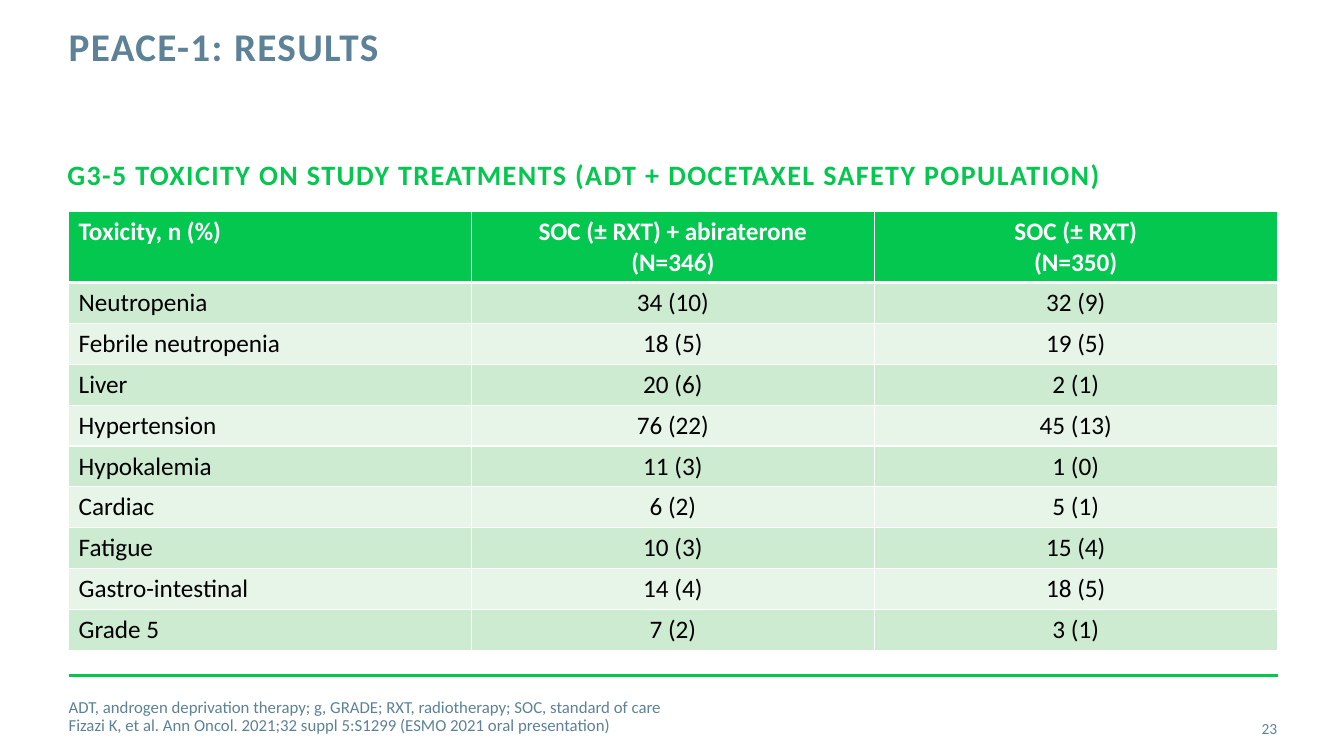
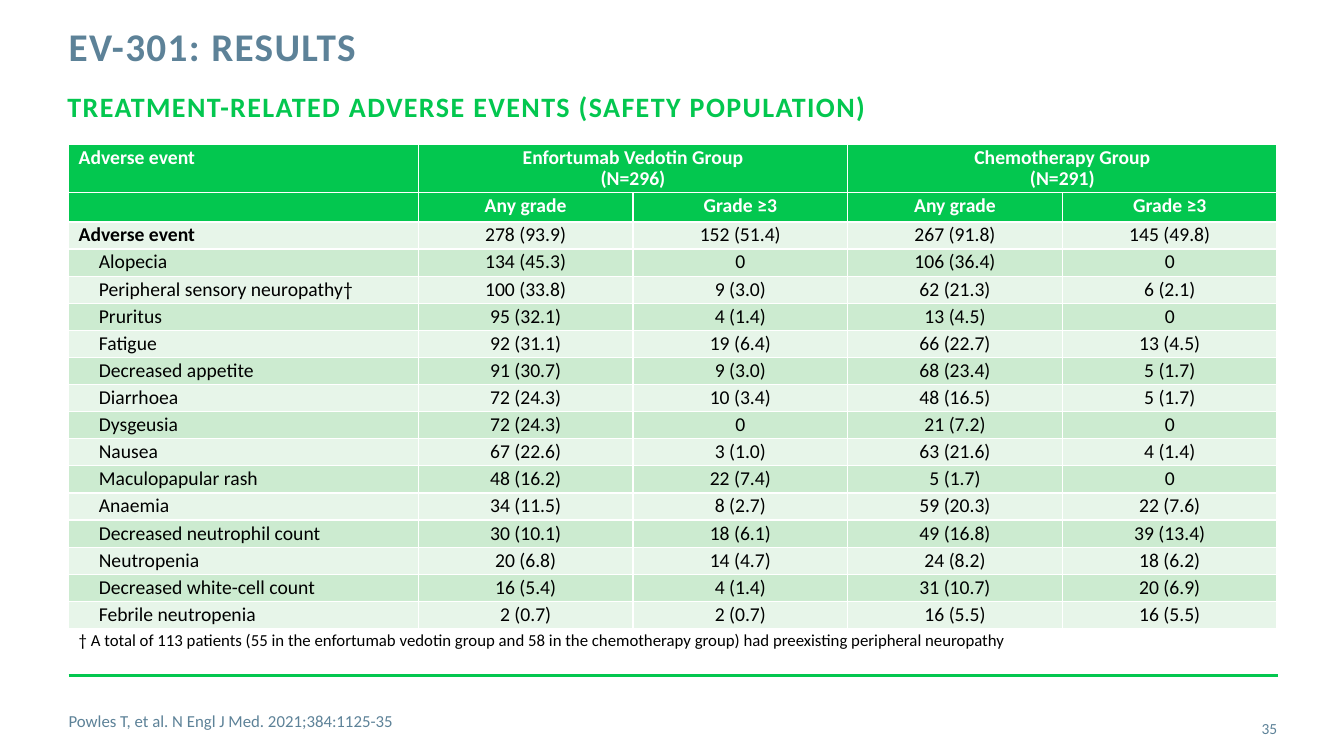
import pptx
import pptx.dml.color
import pptx.enum.shapes
import pptx.enum.text
import pptx.oxml.ns
import pptx.util
from lxml import etree

Pt = pptx.util.Pt
RGBColor = pptx.dml.color.RGBColor
Align = pptx.enum.text.PP_ALIGN
Anchor = pptx.enum.text.MSO_ANCHOR
qn = pptx.oxml.ns.qn

GREEN = RGBColor(0x03, 0xC7, 0x4F)
SLATE = RGBColor(0x5D, 0x82, 0x98)
BAND_DARK = RGBColor(0xCC, 0xEB, 0xD0)
BAND_LIGHT = RGBColor(0xE7, 0xF5, 0xE9)
WHITE = RGBColor(0xFF, 0xFF, 0xFF)
BLACK = RGBColor(0, 0, 0)
FONT = "Calibri"
LEFT = 49
TABLE_WIDTH = 863.3

SLIDES = [
    {
        "title": "PEACE-1: RESULTS",
        "subtitle": "G3-5 TOXICITY ON STUDY TREATMENTS (ADT + DOCETAXEL SAFETY POPULATION)",
        "subtitle_top": 112.5,
        "footer": [
            "ADT, androgen deprivation therapy; g, GRADE; RXT, radiotherapy; SOC, standard of care",
            "Fizazi K, et al. Ann Oncol. 2021;32 suppl 5:S1299 (ESMO 2021 oral presentation)",
        ],
        "footer_top": 496.8,
        "page": "23",
        "table": {
            "top": 151.2, "first_column": TABLE_WIDTH / 3, "header_heights": [50.6],
            "row_height": 29.2, "size": 18, "spacing": 1, "margin": 3.6, "rule": 3,
            "headers": [
                ["Toxicity, n (%)", "SOC (± RXT) + abiraterone\n(N=346)", "SOC (± RXT)\n(N=350)"],
            ],
            "rows": [
                ["Neutropenia", "34 (10)", "32 (9)"],
                ["Febrile neutropenia", "18 (5)", "19 (5)"],
                ["Liver", "20 (6)", "2 (1)"],
                ["Hypertension", "76 (22)", "45 (13)"],
                ["Hypokalemia", "11 (3)", "1 (0)"],
                ["Cardiac", "6 (2)", "5 (1)"],
                ["Fatigue", "10 (3)", "15 (4)"],
                ["Gastro-intestinal", "14 (4)", "18 (5)"],
                ["Grade 5", "7 (2)", "3 (1)"],
            ],
        },
    },
    {
        "title": "EV-301: RESULTS",
        "subtitle": "TREATMENT-RELATED ADVERSE EVENTS (SAFETY POPULATION)",
        "subtitle_top": 64,
        "footer": ["Powles T, et al. N Engl J Med. 2021;384:1125-35"],
        "footer_top": 500.4,
        "page": "35",
        "table": {
            "top": 103.2, "first_column": 249.8, "header_heights": [34.5, 20.4],
            "row_height": 19.38, "size": 14, "spacing": 0.9, "margin": 2, "rule": 2.25,
            "headers": [
                ["Adverse event", "Enfortumab Vedotin Group\n(N=296)", "",
                 "Chemotherapy Group\n(N=291)", ""],
                ["", "Any grade", "Grade ≥3", "Any grade", "Grade ≥3"],
            ],
            "merges": [(0, 1, 2), (0, 3, 4)],
            "total_row": "Adverse event",
            "label_indent": 14.4,
            "rows": [
                ["Adverse event", "278 (93.9)", "152 (51.4)", "267 (91.8)", "145 (49.8)"],
                ["Alopecia", "134 (45.3)", "0", "106 (36.4)", "0"],
                ["Peripheral sensory neuropathy†", "100 (33.8)", "9 (3.0)", "62 (21.3)", "6 (2.1)"],
                ["Pruritus", "95 (32.1)", "4 (1.4)", "13 (4.5)", "0"],
                ["Fatigue", "92 (31.1)", "19 (6.4)", "66 (22.7)", "13 (4.5)"],
                ["Decreased appetite", "91 (30.7)", "9 (3.0)", "68 (23.4)", "5 (1.7)"],
                ["Diarrhoea", "72 (24.3)", "10 (3.4)", "48 (16.5)", "5 (1.7)"],
                ["Dysgeusia", "72 (24.3)", "0", "21 (7.2)", "0"],
                ["Nausea", "67 (22.6)", "3 (1.0)", "63 (21.6)", "4 (1.4)"],
                ["Maculopapular rash", "48 (16.2)", "22 (7.4)", "5 (1.7)", "0"],
                ["Anaemia", "34 (11.5)", "8 (2.7)", "59 (20.3)", "22 (7.6)"],
                ["Decreased neutrophil count", "30 (10.1)", "18 (6.1)", "49 (16.8)", "39 (13.4)"],
                ["Neutropenia", "20 (6.8)", "14 (4.7)", "24 (8.2)", "18 (6.2)"],
                ["Decreased white-cell count", "16 (5.4)", "4 (1.4)", "31 (10.7)", "20 (6.9)"],
                ["Febrile neutropenia", "2 (0.7)", "2 (0.7)", "16 (5.5)", "16 (5.5)"],
            ],
            "footnote": "† A total of 113 patients (55 in the enfortumab vedotin group and 58 in "
                        "the chemotherapy group) had preexisting peripheral neuropathy",
        },
    },
]


def style_paragraph(para, size, color, bold=False, align=Align.LEFT, spacing=None):
    para.alignment = align
    if spacing:
        para.line_spacing = spacing
    para.font.name = FONT
    para.font.size = Pt(size)
    para.font.bold = bold
    para.font.color.rgb = color


def add_text(slide, lines, left, top, width, height, size, color, bold=False,
             align=Align.LEFT, anchor=Anchor.TOP, spacing=None, tracking=0):
    box = slide.shapes.add_textbox(Pt(left), Pt(top), Pt(width), Pt(height))
    frame = box.text_frame
    frame.word_wrap = True
    frame.vertical_anchor = anchor
    frame.margin_left = frame.margin_right = frame.margin_top = frame.margin_bottom = 0
    frame.text = "\n".join(lines)
    for para in frame.paragraphs:
        style_paragraph(para, size, color, bold, align, spacing)
        if tracking:
            para._p.pPr.find(qn("a:defRPr")).set("spc", str(tracking * 100))
    return frame


def set_borders(cell, top, bottom):
    """Draw white edges; only the top and bottom widths vary."""
    properties = cell._tc.get_or_add_tcPr()
    for side, width in (("L", 1), ("R", 1), ("T", top), ("B", bottom)):
        edge = etree.SubElement(properties, qn("a:ln" + side), w=str(Pt(width)))
        fill = etree.SubElement(edge, qn("a:solidFill"))
        etree.SubElement(fill, qn("a:srgbClr"), val=str(WHITE))


def fill_cell(cell, text, content, size, color, bold, align, fill, top=1, bottom=1, indent=0):
    set_borders(cell, top, bottom)
    if fill is None:
        cell.fill.background()
    else:
        cell.fill.solid()
        cell.fill.fore_color.rgb = fill
    cell.margin_top = cell.margin_bottom = Pt(content["margin"])
    para = cell.text_frame.paragraphs[0]
    if text:
        para.text = text
    else:
        etree.SubElement(para._p, qn("a:endParaRPr"), sz=str(size * 100))
    style_paragraph(para, size, color, bold, align, content["spacing"])
    if indent:
        para._p.pPr.set("marL", str(Pt(indent)))


def add_results_table(slide, content):
    headers = content["headers"]
    rows = headers + content["rows"]
    heights = content["header_heights"] + [content["row_height"]] * len(content["rows"])
    merges = list(content.get("merges", []))
    columns = len(headers[0])
    footnote = content.get("footnote")
    if footnote:
        merges.append((len(rows), 0, columns - 1))
        rows = rows + [[footnote] + [""] * (columns - 1)]
        heights.append(17)

    table = slide.shapes.add_table(
        len(rows), columns, Pt(LEFT), Pt(content["top"]), Pt(TABLE_WIDTH), Pt(sum(heights))).table
    table.first_row = table.horz_banding = False
    other_width = (TABLE_WIDTH - content["first_column"]) / (columns - 1)
    for index, column in enumerate(table.columns):
        column.width = Pt(other_width if index else content["first_column"])
    for row, height in zip(table.rows, heights):
        row.height = Pt(height)

    for row_index, row in enumerate(rows):
        is_header = row_index < len(headers)
        is_footnote = row[0] == footnote
        is_total = row[0] == content.get("total_row")
        band = BAND_DARK if row_index % 2 else BAND_LIGHT
        fill = GREEN if is_header else None if is_footnote else band
        for column_index, text in enumerate(row):
            is_label = column_index == 0
            plain_label = is_label and not (is_header or is_footnote or is_total)
            fill_cell(
                table.cell(row_index, column_index), text, content,
                size=12 if is_footnote else content["size"],
                color=WHITE if is_header else BLACK,
                bold=is_header or (is_total and is_label),
                align=Align.LEFT if is_label else Align.CENTER,
                fill=fill,
                top=content["rule"] if row_index == len(headers) else 1,
                bottom=content["rule"] if row_index == len(headers) - 1 else 1,
                indent=content.get("label_indent", 0) if plain_label else 0)
    for row_index, first, last in merges:
        table.cell(row_index, first).merge(table.cell(row_index, last))


def add_footer_line(slide):
    line = slide.shapes.add_connector(
        pptx.enum.shapes.MSO_CONNECTOR.STRAIGHT, Pt(LEFT), Pt(482.4), Pt(913), Pt(482.4))
    line.line.color.rgb = GREEN
    line.line.width = Pt(2)
    etree.SubElement(line._element.spPr, qn("a:effectLst"))


def add_results_slide(deck, content):
    slide = deck.slides.add_slide(deck.slide_layouts[6])
    add_footer_line(slide)
    add_text(slide, [content["subtitle"]], 48.2, content["subtitle_top"], 864, 55.4,
             20, GREEN, bold=True, tracking=1)
    add_results_table(slide, content["table"])
    add_text(slide, [content["title"]], LEFT, 19.4, 688, 63.4,
             28, SLATE, bold=True, spacing=Pt(30), tracking=1)
    add_text(slide, [content["page"]], 850.3, 506.2, 62, 28.8,
             11, SLATE, align=Align.RIGHT, anchor=Anchor.MIDDLE)
    footer = add_text(slide, content["footer"], LEFT, content["footer_top"], 639.4, 28.8,
                      12, SLATE, anchor=Anchor.MIDDLE)
    for para in footer.paragraphs[1:]:
        para.line_spacing = 0.9


def main():
    deck = pptx.Presentation()
    deck.slide_width, deck.slide_height = Pt(960), Pt(540)
    for content in SLIDES:
        add_results_slide(deck, content)
    deck.save("out.pptx")


if __name__ == "__main__":
    main()
